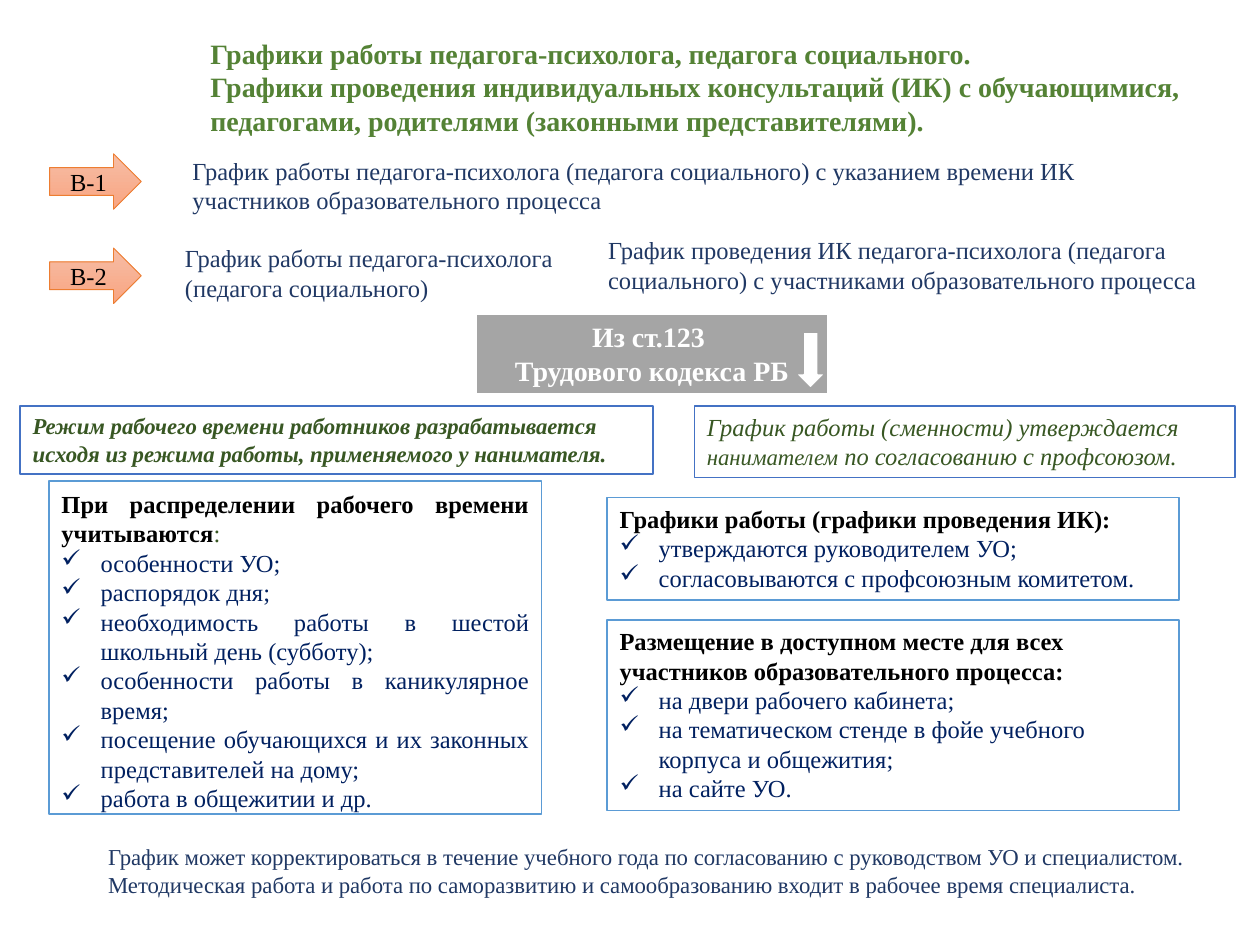
from lxml.etree import SubElement
from pptx import Presentation
from pptx.dml.color import RGBColor
from pptx.enum.shapes import MSO_SHAPE
from pptx.enum.text import MSO_ANCHOR, MSO_AUTO_SIZE, PP_ALIGN
from pptx.oxml.ns import qn
from pptx.util import Cm, Pt

FONT = "Times New Roman"
BLACK = RGBColor(0x00, 0x00, 0x00)
WHITE = RGBColor(0xFF, 0xFF, 0xFF)
GRAY = RGBColor(0xA5, 0xA5, 0xA5)
TITLE_GREEN = RGBColor(0x54, 0x82, 0x35)
DARK_GREEN = RGBColor(0x38, 0x57, 0x23)
SLATE = RGBColor(0x20, 0x38, 0x64)
NAVY = RGBColor(0x00, 0x20, 0x60)
LIGHT_BLUE = RGBColor(0x5B, 0x9B, 0xD5)
BLUE = RGBColor(0x44, 0x72, 0xC4)
ORANGE = RGBColor(0xED, 0x7D, 0x31)
PEACH_TOP = RGBColor(0xF7, 0xBD, 0xA5)
PEACH_BOTTOM = RGBColor(0xF8, 0xA5, 0x82)


def add_span(para, text, size, color, bold=False, italic=False):
    span = para.add_run()
    span.text = text
    font = span.font
    font.name, font.size, font.bold, font.italic = FONT, Pt(size), bold, italic
    font.color.rgb = color


def add_check_mark(para):
    properties = para._p.get_or_add_pPr()
    properties.set("marL", str(Cm(0.79)))
    properties.set("indent", str(Cm(-0.79)))
    SubElement(properties, qn("a:buChar")).set("char", "✓")


def next_para(frame, align=PP_ALIGN.LEFT):
    first = frame.paragraphs[0]
    para = frame.add_paragraph() if first.runs else first
    para.alignment = align
    return para


def add_label(page, place, lines, size=14, color=SLATE, bold=False):
    box = page.shapes.add_textbox(*map(Cm, place))
    frame = box.text_frame
    frame.word_wrap = True
    frame.auto_size = MSO_AUTO_SIZE.SHAPE_TO_FIT_TEXT
    for line in lines:
        add_span(next_para(frame), line, size, color, bold)


def add_outlined(page, kind, place, line_color, line_width=1.0, fill=WHITE):
    shape = page.shapes.add_shape(kind, *map(Cm, place))
    shape.shadow.inherit = False
    shape.fill.solid()
    shape.fill.fore_color.rgb = fill
    shape.line.color.rgb = line_color
    shape.line.width = Pt(line_width)
    return shape


def add_panel(page, place, line_color, line_width=1.0, fill=WHITE):
    """Add a bordered rectangle and return its text frame."""
    panel = add_outlined(page, MSO_SHAPE.RECTANGLE, place, line_color, line_width, fill)
    frame = panel.text_frame
    frame.word_wrap = True
    frame.auto_size = MSO_AUTO_SIZE.SHAPE_TO_FIT_TEXT
    frame.vertical_anchor = MSO_ANCHOR.TOP
    return frame


def add_checklist(page, place, heading, items, align=PP_ALIGN.LEFT, ending=""):
    frame = add_panel(page, place, LIGHT_BLUE)
    para = next_para(frame, align)
    add_span(para, heading, 14, BLACK, bold=True)
    if ending:
        add_span(para, ending, 14, DARK_GREEN)
    for item in items:
        para = next_para(frame, align)
        add_check_mark(para)
        add_span(para, item, 14, NAVY)
    return frame


def add_variant_arrow(page, top, text):
    arrow = add_outlined(page, MSO_SHAPE.RIGHT_ARROW, (1, top, 1.85, 1.12), ORANGE, 0.5)
    arrow.fill.gradient()
    arrow.fill.gradient_angle = 270
    for stop, color in zip(arrow.fill.gradient_stops, (PEACH_TOP, PEACH_BOTTOM)):
        stop.color.rgb = color
    arrow.text_frame.vertical_anchor = MSO_ANCHOR.MIDDLE
    add_span(next_para(arrow.text_frame, PP_ALIGN.CENTER), text, 14, BLACK)


def main():
    deck = Presentation()
    deck.slide_width, deck.slide_height = Cm(25.4), Cm(19.05)
    page = deck.slides.add_slide(deck.slide_layouts[6])

    # Title
    add_label(page, (3.99, 0.61, 20.73, 2.31), [
        "Графики работы педагога-психолога, педагога социального.",
        "Графики проведения индивидуальных консультаций (ИК) с обучающимися, "
        "педагогами, родителями (законными представителями).",
    ], 16, TITLE_GREEN, bold=True)

    # Two variants of the schedule
    add_variant_arrow(page, 3.1, "В-1")
    add_label(page, (3.63, 3.02, 19.38, 1.45), [
        "График работы педагога-психолога (педагога социального) с указанием "
        "времени ИК участников образовательного процесса"])
    add_variant_arrow(page, 5, "В-2")
    add_label(page, (3.48, 4.78, 8.15, 1.45), [
        "График работы педагога-психолога (педагога социального)"])
    add_label(page, (12.01, 4.62, 12.57, 1.45), [
        "График проведения ИК педагога-психолога (педагога социального) "
        "с участниками образовательного процесса"])

    # Labour code reference with its down arrow
    code = add_panel(page, (9.6, 6.32, 7.09, 1.63), WHITE, 1.5, GRAY)
    for line in ("Из ст.123 ", "Трудового кодекса РБ"):
        add_span(next_para(code, PP_ALIGN.CENTER), line, 16, WHITE, bold=True)
    down = add_outlined(page, MSO_SHAPE.RIGHT_ARROW, (15.77, 6.96, 1.14, 0.61), GRAY)
    down.rotation = 90

    # Rules taken from the code
    regime = add_panel(page, (0.41, 8.18, 12.75, 1.37), BLUE)
    add_span(next_para(regime),
             "Режим рабочего времени работников разрабатывается исходя из режима "
             "работы, применяемого у нанимателя.", 13, DARK_GREEN, True, True)
    approval = next_para(add_panel(page, (14, 8.18, 10.9, 1.45), BLUE))
    for text, size in (("График работы (сменности) утверждается ", 14),
                       ("нанимателем", 13),
                       (" по согласованию с профсоюзом.", 14)):
        add_span(approval, text, size, DARK_GREEN, italic=True)

    # Checklists
    factors = add_checklist(
        page, (0.99, 9.7, 9.93, 6.71),
        "При распределении рабочего времени учитываются",
        ["особенности УО; ",
         "распорядок дня; ",
         "необходимость работы в шестой школьный день (субботу);",
         "особенности работы в каникулярное время;",
         "посещение обучающихся и их законных представителей на дому; ",
         "работа в общежитии и др."],
        PP_ALIGN.JUSIFY if hasattr(PP_ALIGN, "JUSIFY") else PP_ALIGN.JUSTIFY, ":")
    factors.margin_bottom = 0
    factors.vertical_anchor = MSO_ANCHOR.MIDDLE
    add_checklist(
        page, (12.24, 10.03, 11.53, 2.06),
        "Графики работы (графики проведения ИК):",
        ["утверждаются руководителем УО;",
         "согласовываются с профсоюзным комитетом."])
    add_checklist(
        page, (12.24, 12.5, 11.53, 3.84),
        "Размещение в доступном месте для всех участников образовательного процесса:",
        ["на двери рабочего кабинета;",
         "на тематическом стенде в фойе учебного корпуса и общежития;",
         "на сайте УО."])

    # Closing note
    add_label(page, (1.93, 16.87, 22.76, 1.37), [
        "График может корректироваться в течение учебного года по согласованию "
        "с руководством УО и специалистом. Методическая работа и работа по "
        "саморазвитию и самообразованию входит в рабочее время специалиста."], 13)

    deck.save("out.pptx")


if __name__ == "__main__":
    main()
